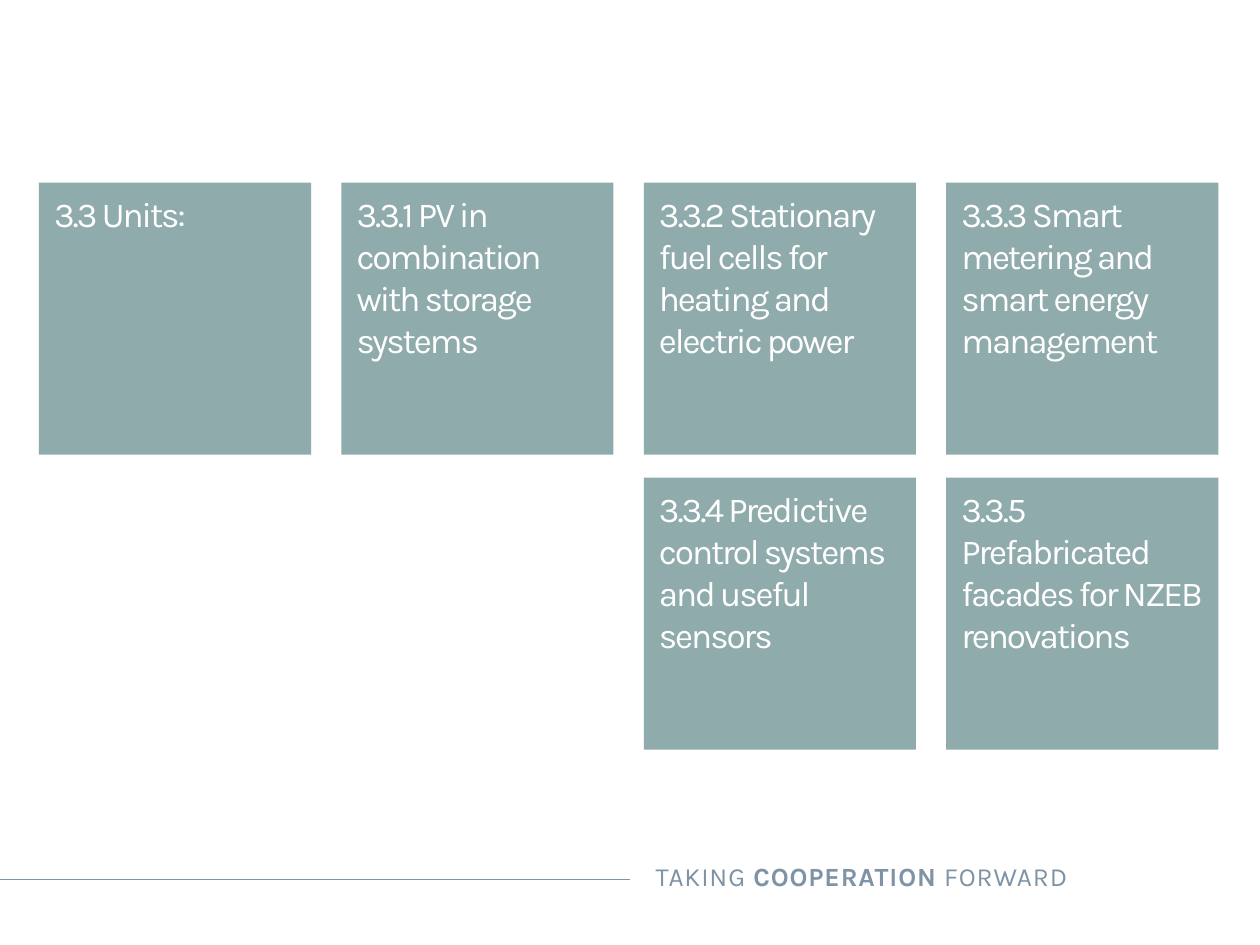
from lxml import etree
from pptx import Presentation
from pptx import util as u
from pptx.dml.color import RGBColor
from pptx.enum import shapes, text
from pptx.oxml.ns import qn


def colour(hex_code):
    return RGBColor.from_string(hex_code)


class UnitSlide:
    font = "Karla"
    tile_fill = "90ABAB"
    tile_text = "FFFFFF"
    accent = "7E93A5"

    def __init__(self, slide):
        self.slide = slide

    def style_run(self, run, size, hex_code, spacing, bold=False):
        run.font.name = self.font
        run.font.size = u.Pt(size)
        run.font.bold = bold
        run.font.color.rgb = colour(hex_code)
        run.font._element.set("spc", str(round(spacing * 100)))

    def tile(self, left, top, side, wording):
        tile = self.slide.shapes.add_shape(
            shapes.MSO_SHAPE.RECTANGLE,
            u.Inches(left), u.Inches(top), u.Inches(side), u.Inches(side))
        tile.shadow.inherit = False
        tile.fill.solid()
        tile.fill.fore_color.rgb = colour(self.tile_fill)
        tile.line.fill.background()
        frame = tile.text_frame
        frame.word_wrap = True
        frame.vertical_anchor = text.MSO_ANCHOR.TOP
        frame.margin_left = frame.margin_right = frame.margin_bottom = u.Inches(0.12)
        frame.margin_top = u.Inches(0.08)
        frame.text = wording
        paragraph = frame.paragraphs[0]
        paragraph.alignment = text.PP_ALIGN.LEFT
        self.style_run(paragraph.runs[0], 20, self.tile_text, -1.2)

    def rule(self, start, end, y):
        rule = self.slide.shapes.add_connector(
            shapes.MSO_CONNECTOR.STRAIGHT,
            u.Inches(start), u.Inches(y), u.Inches(end), u.Inches(y))
        rule.line.color.rgb = colour(self.accent)
        rule.line.width = u.Pt(0.75)
        etree.SubElement(rule._element.spPr, qn("a:effectLst"))

    def motto(self, left, top, width, height, parts):
        motto = self.slide.shapes.add_textbox(
            u.Inches(left), u.Inches(top), u.Inches(width), u.Inches(height))
        frame = motto.text_frame
        frame.word_wrap = True
        paragraph = frame.paragraphs[0]
        paragraph.alignment = text.PP_ALIGN.RIGHT
        for wording, bold in parts:
            run = paragraph.add_run()
            run.text = wording
            self.style_run(run, 15, self.accent, 0.5, bold)


def main():
    deck = Presentation()
    deck.slide_width, deck.slide_height = u.Inches(10), u.Inches(7.5)
    units = UnitSlide(deck.slides.add_slide(deck.slide_layouts[6]))

    units.rule(0, 5, 6.98)
    units.motto(3.88, 6.78, 4.69, 0.35,
                [("TAKING ", False), ("COOPERATION", True), (" FORWARD", False)])

    left, top, side, column_step, row_step = 0.31, 1.45, 2.16, 2.4, 2.34
    unit_tiles = [
        (0, 0, "3.3 Units:"),
        (0, 1, "3.3.1 PV in combination with storage systems"),
        (0, 2, "3.3.2 Stationary fuel cells for heating and electric power"),
        (0, 3, "3.3.3 Smart metering and smart energy management"),
        (1, 2, "3.3.4 Predictive control systems and useful sensors"),
        (1, 3, "3.3.5 Prefabricated facades for NZEB renovations"),
    ]
    for row, column, wording in unit_tiles:
        units.tile(left + column * column_step, top + row * row_step, side, wording)

    deck.save("out.pptx")


if __name__ == "__main__":
    main()
